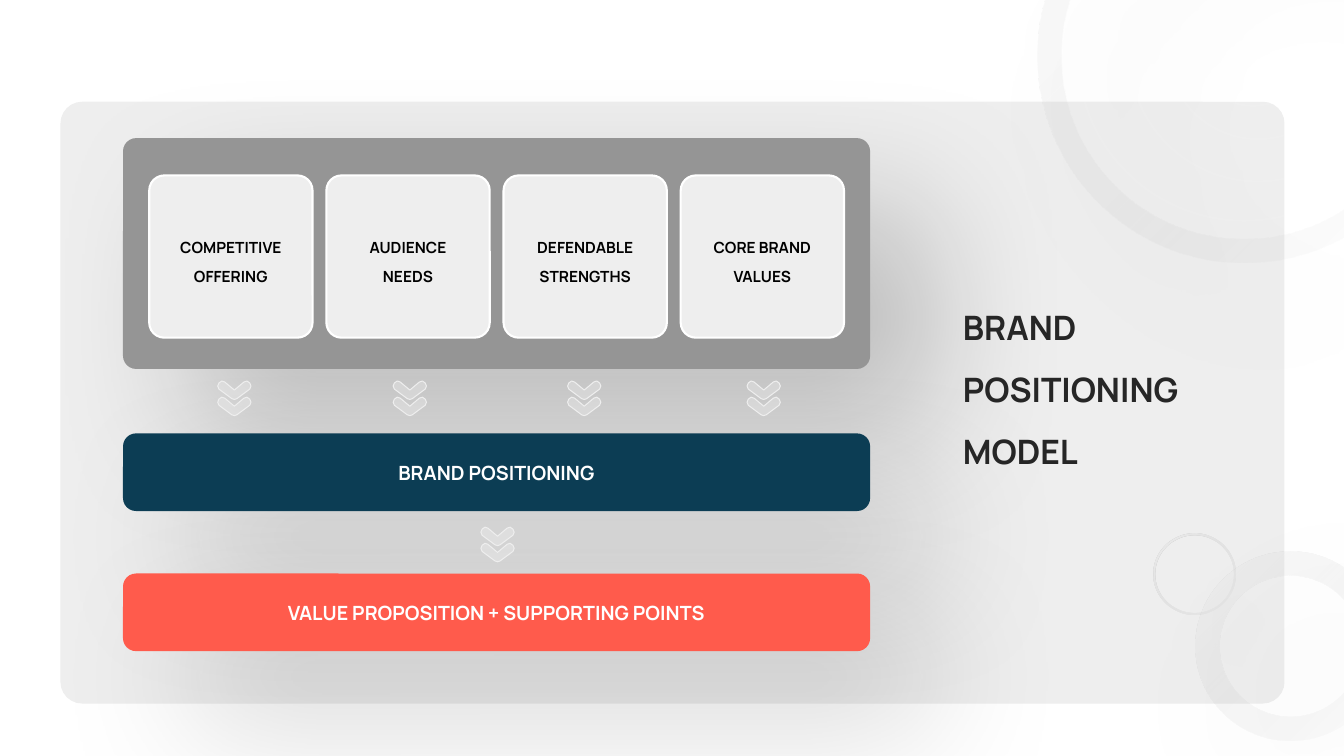
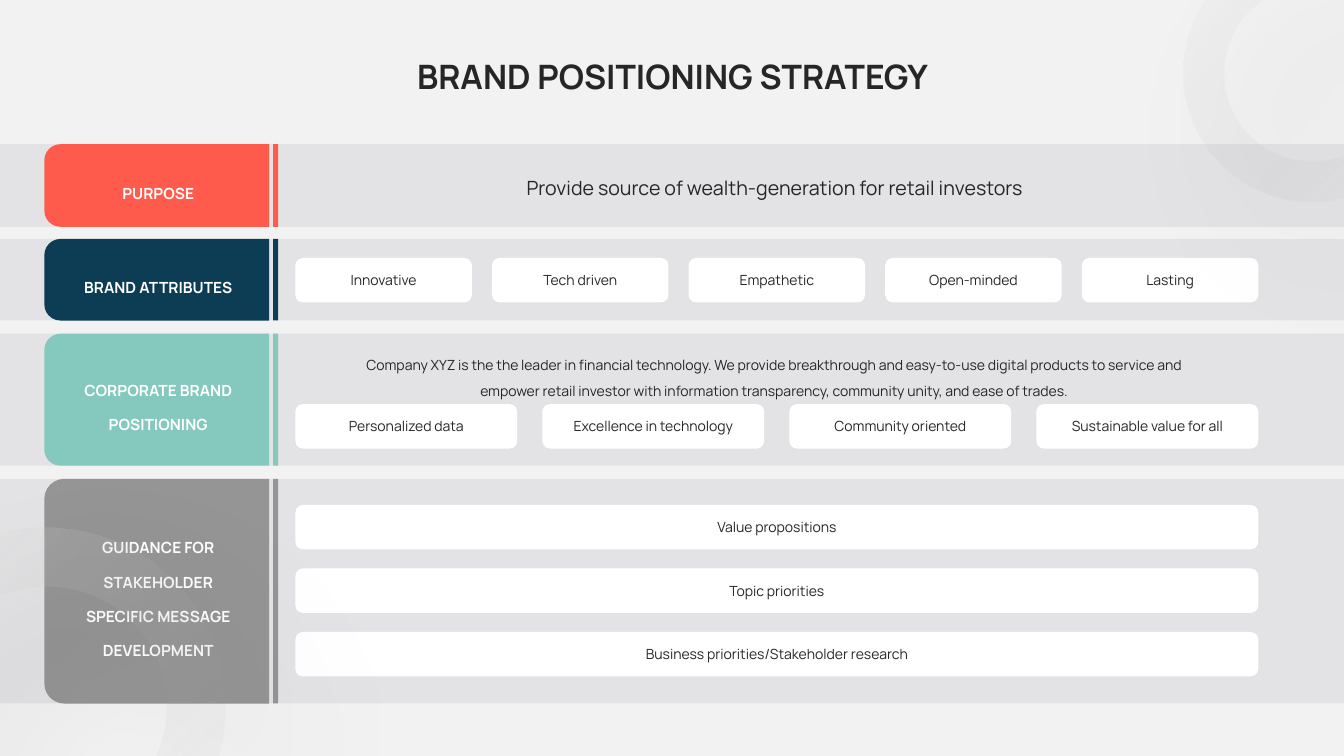
"""Build two brand positioning slides."""
from lxml.etree import SubElement
from pptx import Presentation
from pptx.dml.color import RGBColor
from pptx.enum.shapes import MSO_SHAPE as Kind
from pptx.enum.text import MSO_ANCHOR as Anchor, PP_ALIGN as Align
from pptx.oxml.ns import qn
from pptx.util import Inches, Pt

WIDE, HIGH = 13.33, 7.5
HUES = {"white": "FFFFFF", "page": "F2F2F2", "pale": "EEEEEE", "grey": "959595",
        "mid": "7F7F7F", "slate": "525664", "navy": "0C3D54", "coral": "FF5B4C",
        "mint": "85C8BD", "ink": "262626", "black": "000000", "blue": "3553D3"}
SOFT = ("black", 20, 100, 65, 45)
DEEP = ("black", 40, 100, 65, 45)
GLOW = ("blue", 5, 52, 4, 90)
INSET = (0.1, 0.05)
TITLE = {"size": 24, "hue": "ink", "bold": True}
BAR = {"size": 14, "hue": "white", "bold": True, "inset": INSET}
CARD = {"size": 11, "hue": "black", "bold": True, "space": 1.55}
LABEL = {"size": 11, "hue": "white", "bold": True, "space": 1.85, "inset": INSET}
CHIP = {"size": 10, "hue": "ink", "inset": INSET}

CARDS = ["COMPETITIVE OFFERING", "AUDIENCE\nNEEDS", "DEFENDABLE STRENGTHS",
         "CORE BRAND\nVALUES"]
BARS = [("BRAND POSITIONING", "navy", 4.3),
        ("VALUE PROPOSITION + SUPPORTING POINTS", "coral", 5.69)]
RINGS = [[(10.29, -1.5, 4.1, 0.058, 21), (11.44, 5.29, 0.81, 0.026, 41),
          (11.86, 5.47, 1.88, 0.129, 22)],
         [(11.74, -0.55, 2.55, 0.158, 21), (-1.3, 5.23, 3.54, 0.166, 21)]]
HALOS = [(10.69, -1.11, 3.3), (11.2, -0.75, 2.55), (11.57, -0.44, 1.82),
         (11.81, -0.18, 1.23)]
ARROWS = [(2.16, 3.78), (3.9, 3.78), (5.63, 3.78), (7.41, 3.78), (4.77, 5.23)]
HALF = [(165, 90), (70, 10), (40, 0), (12, 20), (0, 50), (12, 80), (140, 175), (165, 183)]
ROWS = [("PURPOSE", "coral", 1.43, 0.82),
        ("BRAND ATTRIBUTES", "navy", 2.37, 0.81),
        ("CORPORATE BRAND\nPOSITIONING", "mint", 3.31, 1.31),
        ("GUIDANCE FOR\nSTAKEHOLDER\nSPECIFIC MESSAGE\nDEVELOPMENT", "grey", 4.75, 2.23)]
CHIPS = [(2.56, 1.75, ["Innovative", "Tech driven", "Empathetic", "Open-minded", "Lasting"]),
         (4.01, 2.2, ["Personalized data", "Excellence in technology",
                      "Community oriented", "Sustainable value for all"]),
         (5.01, 9.55, ["Value propositions"]),
         (5.64, 9.55, ["Topic priorities"]),
         (6.27, 9.55, ["Business priorities/Stakeholder research"])]
NOTES = [("Provide source of wealth-generation for retail investors",
          (4.57, 1.72, 6.23, 0.23), 14, 1.11),
         ("Company XYZ is the the leader in financial technology. We provide breakthrough "
          "and easy-to-use digital products to service and empower retail investor with "
          "information transparency, community unity, and ease of trades.",
          (3.52, 3.44, 8.31, 0.43), 10, 1.56)]


def rgb(hue):
    """Return a named colour."""
    return RGBColor.from_string(HUES[hue])


def fade(part, *shares):
    """Set the opacity of the colours in an element, in percent."""
    for tone, share in zip(part.iter(qn("a:srgbClr")), shares):
        SubElement(tone, qn("a:alpha"), val=str(share * 1000))


def shade(shape, hue, share, blur, dist, angle):
    """Give a shape an outer shadow."""
    box = shape._element.spPr.find(qn("a:effectLst"))
    drop = SubElement(box, qn("a:outerShdw"), blurRad=str(Pt(blur)), dist=str(Pt(dist)),
                      dir=str(angle * 60000), algn="tl", rotWithShape="0")
    fade_tone = SubElement(drop, qn("a:srgbClr"), val=HUES[hue])
    fade(drop, share) if fade_tone is not None else None


def paint(shape, fill=None, line=None, width=1.5, clear=None, shadow=None):
    """Set fill, outline and shadow."""
    shape.shadow.inherit = False
    if fill:
        shape.fill.solid()
        shape.fill.fore_color.rgb = rgb(fill)
    else:
        shape.fill.background()
    if line:
        shape.line.color.rgb = rgb(line)
        shape.line.width = Pt(width)
    else:
        shape.line.fill.background()
    if clear:
        fade(shape._element.spPr, clear)
    if shadow:
        shade(shape, *shadow)
    return shape


def add(slide, kind, spot, *adjust, **look):
    """Add a painted preset shape."""
    shape = slide.shapes.add_shape(kind, *map(Inches, spot))
    for i, value in enumerate(adjust):
        shape.adjustments[i] = value
    return paint(shape, **look)


def write(shape, text, size, hue, bold=False, space=None, inset=(0, 0),
          align=Align.CENTER, anchor=Anchor.MIDDLE):
    """Fill a shape with text, one paragraph a line."""
    frame = shape.text_frame
    side, edge = map(Inches, inset)
    form = {"word_wrap": True, "vertical_anchor": anchor, "margin_left": side,
            "margin_right": side, "margin_top": edge, "margin_bottom": edge}
    for name, value in form.items():
        setattr(frame, name, value)
    frame.text = text
    for para in frame.paragraphs:
        para.alignment, para.line_spacing = align, space
        for run in para.runs:
            for name, value in {"name": "Manrope", "size": Pt(size), "bold": bold}.items():
                setattr(run.font, name, value)
            run.font.color.rgb = rgb(hue)


def label(slide, text, spot, **form):
    """Add a text box."""
    write(slide.shapes.add_textbox(*map(Inches, spot)), text, **form)


def ring(slide, left, top, size, thick, share):
    """Add a fading ring."""
    shape = add(slide, Kind.DONUT, (left, top, size, size), thick)
    shape.fill.gradient()
    shape.fill.gradient_angle = 315
    for stop, hue, place in zip(shape.fill.gradient_stops, ("pale", "mid"), (0.02, 1)):
        stop.color.rgb, stop.position = rgb(hue), place
    fade(shape._element.spPr, share, 0)
    shade(shape, *DEEP)


def arrow(slide, left, top):
    """Add one rounded chevron that points down."""
    dots = HALF + [(330 - x, y) for x, y in HALF[-2:0:-1]]
    pen = slide.shapes.build_freeform(*dots[0], scale=914.4)
    pen.add_line_segments(dots[1:], close=True)
    paint(pen.convert_to_shape(Inches(left), Inches(top)), "white", "pale", 0.75, 25)


def start(deck, hue):
    """Add a blank slide with a plain background."""
    slide = deck.slides.add_slide(deck.slide_layouts[6])
    slide.background.fill.solid()
    slide.background.fill.fore_color.rgb = rgb(hue)
    return slide


def model(deck):
    """Build the model slide."""
    slide = start(deck, "white")
    left, width = 1.22, 7.41
    add(slide, Kind.ROUNDED_RECTANGLE, (0.6, 1.01, 12.14, 5.97), 0.036, fill="pale")
    add(slide, Kind.ROUNDED_RECTANGLE, (left, 1.37, width, 2.29), 0.057,
        fill="grey", shadow=SOFT)
    for item in RINGS[0]:
        ring(slide, *item)
    for text, hue, top in BARS:
        bar = add(slide, Kind.ROUNDED_RECTANGLE, (left, top, width, 0.77), 0.167,
                  fill=hue, shadow=SOFT)
        write(bar, text, **BAR)
    for i, text in enumerate(CARDS):
        card = add(slide, Kind.ROUNDED_RECTANGLE, (1.48 + i * 1.757, 1.74, 1.62, 1.61),
                   0.093, fill="pale", line="white")
        write(card, text, **CARD)
    label(slide, "BRAND POSITIONING MODEL", (9.55, 2.99, 3.25, 1.53),
          space=1.53, align=Align.LEFT, **TITLE)
    for x, y, size in HALOS:
        add(slide, Kind.OVAL, (x, y, size, size), line="white", clear=8, shadow=GLOW)
    for x, y in ARROWS:
        for step in (0, 0.16):
            arrow(slide, x, y + step)


def plan(deck):
    """Build the strategy slide."""
    slide = start(deck, "page")
    label(slide, "BRAND POSITIONING STRATEGY", (2.83, 0.55, 7.68, 0.4), **TITLE)
    tab = 2.23
    for text, hue, top, high in ROWS:
        add(slide, Kind.RECTANGLE, (0, top, WIDE, high), fill="slate", clear=9)
        spot = (0.44 + (tab - high) / 2, top + (high - tab) / 2, high, tab)
        side = add(slide, Kind.ROUND_2_SAME_RECTANGLE, spot, 0.16 / min(high, 1.8), 0,
                   fill=hue)
        side.rotation = 270
        label(slide, text, (0.48, top + 0.05, 2.18, high - 0.1), **LABEL)
        add(slide, Kind.RECTANGLE, (2.71, top, 0.05, high), fill=hue)
    for text, spot, size, space in NOTES:
        label(slide, text, spot, size=size, hue="ink", space=space, anchor=Anchor.TOP)
    left, span = 2.93, 9.55
    for top, width, names in CHIPS:
        step = (span - width) / max(len(names) - 1, 1)
        for i, name in enumerate(names):
            chip = add(slide, Kind.ROUNDED_RECTANGLE, (left + i * step, top, width, 0.44),
                       0.167, fill="white")
            write(chip, name, **CHIP)
    for item in RINGS[1]:
        ring(slide, *item)


def main():
    """Build and save the deck."""
    deck = Presentation()
    deck.slide_width, deck.slide_height = Inches(WIDE), Inches(HIGH)
    model(deck)
    plan(deck)
    deck.save("out.pptx")


if __name__ == "__main__":
    main()
